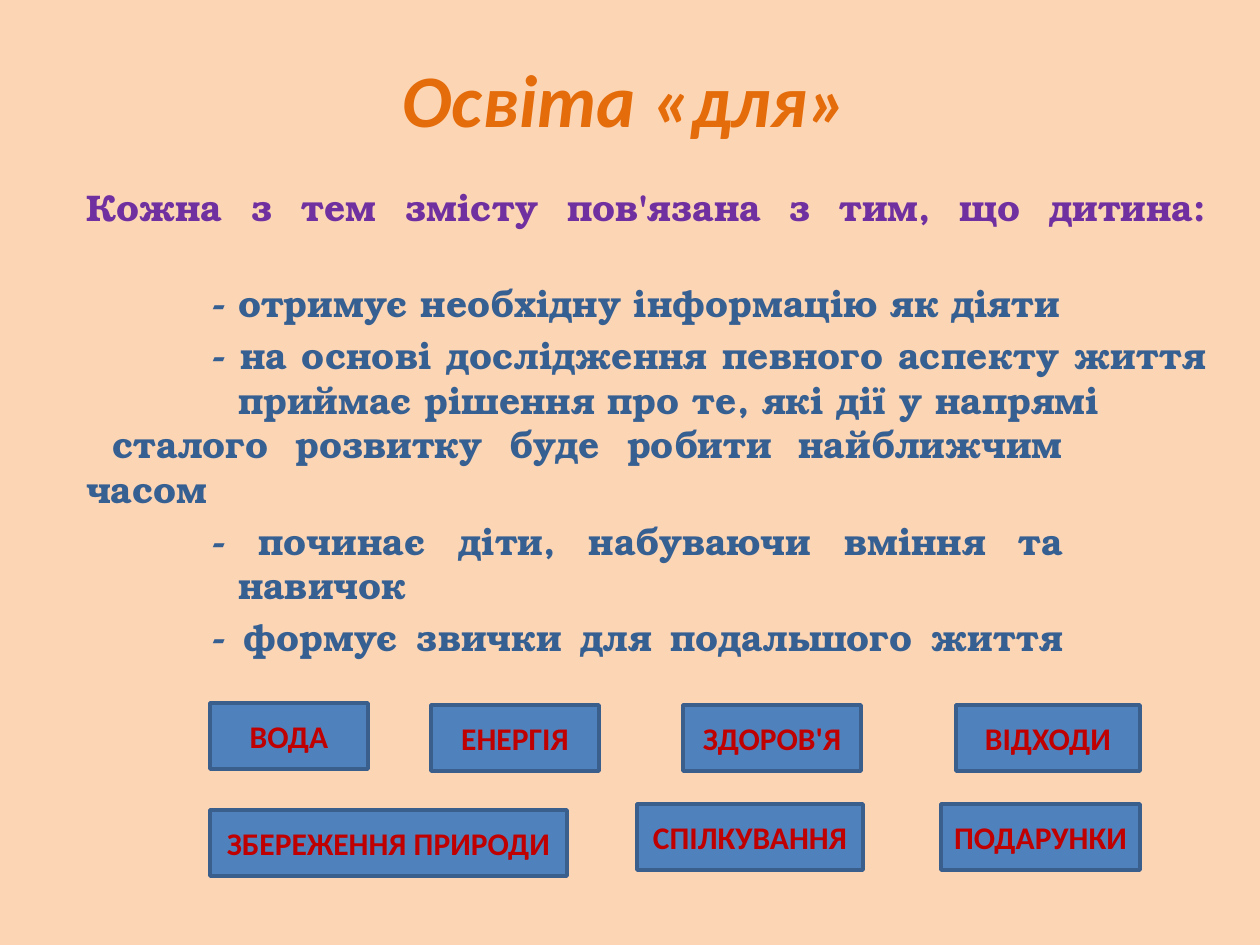
from pptx import Presentation
from pptx.dml.color import RGBColor
from pptx.enum.shapes import MSO_SHAPE
from pptx.enum.text import MSO_ANCHOR, PP_ALIGN
from pptx.util import Pt

RECTANGLE = MSO_SHAPE.RECTANGLE
MIDDLE = MSO_ANCHOR.MIDDLE
CENTER = PP_ALIGN.CENTER
JUSTIFY = PP_ALIGN.JUSTIFY

PX = 6858
COLORS = {
    "background": "FCD5B5",
    "title": "E46C0A",
    "intro": "7030A0",
    "points": "376092",
    "topic": "C00000",
    "topic_fill": "4F81BD",
    "topic_line": "3A5F8C",
}


def color(name):
    return RGBColor.from_string(COLORS[name])


def style(paragraph, font_name, size, color_name, alignment):
    paragraph.alignment = alignment
    paragraph.font.name = font_name
    paragraph.font.size = Pt(size)
    paragraph.font.bold = True
    paragraph.font.color.rgb = color(color_name)


prs = Presentation()
prs.slide_width = 1260 * PX
prs.slide_height = 945 * PX
slide = prs.slides.add_slide(prs.slide_layouts[6])
slide.background.fill.solid()
slide.background.fill.fore_color.rgb = color("background")

# Title
title = slide.shapes.add_textbox(53 * PX, 38 * PX, 1144 * PX, 120 * PX).text_frame
title.word_wrap = True
title.vertical_anchor = MIDDLE
heading = title.paragraphs[0]
heading.text = "Освіта «для»"
style(heading, "Calibri", 40, "title", CENTER)
heading.font.italic = True

# Body: a line break stretches the justified line before it
flush = {"marL": 0, "indent": 0}
hanging = {"marL": 152, "indent": -26}
narrow = {"marL": 0, "marR": 143, "indent": 26}
statements = [
    ("Кожна з тем змісту пов'язана з тим, що дитина:\v", "intro", flush, 4),
    ("- отримує необхідну інформацію як діяти", "points", hanging, 4),
    ("- на основі дослідження певного аспекту життя приймає рішення "
     "про те, які дії у напрямі", "points", hanging, 4),
    ("сталого розвитку буде робити найближчим\vчасом", "points", narrow, 0),
    ("- починає діти, набуваючи вміння та навичок", "points", hanging, 4),
    ("- формує звички для подальшого життя\v", "points", hanging, 4),
]
body = slide.shapes.add_textbox(74 * PX, 178 * PX, 1144 * PX, 735 * PX).text_frame
body.word_wrap = True
body.margin_left = body.margin_right = 12 * PX
for index, (text, color_name, indents, gap) in enumerate(statements):
    statement = body.add_paragraph() if index else body.paragraphs[0]
    statement.text = text
    style(statement, "TeX Gyre Bonum", 20, color_name, JUSTIFY)
    statement.space_before = Pt(gap)
    for side, length in indents.items():
        statement._p.get_or_add_pPr().set(side, str(length * PX))

# Topics: left, top, width, label
topics = [
    (210, 703, 158, "ВОДА"),
    (431, 705, 168, "ЕНЕРГІЯ"),
    (683, 705, 178, "ЗДОРОВ'Я"),
    (956, 705, 184, "ВІДХОДИ"),
    (210, 810, 357, "ЗБЕРЕЖЕННЯ ПРИРОДИ"),
    (637, 804, 226, "СПІЛКУВАННЯ"),
    (941, 804, 199, "ПОДАРУНКИ"),
]
for left, top, width, label in topics:
    topic = slide.shapes.add_shape(RECTANGLE, left * PX, top * PX, width * PX, 66 * PX)
    topic.shadow.inherit = False
    topic.fill.solid()
    topic.fill.fore_color.rgb = color("topic_fill")
    topic.line.color.rgb = color("topic_line")
    topic.line.width = Pt(2)
    topic.text_frame.word_wrap = False
    topic.text_frame.vertical_anchor = MIDDLE
    caption = topic.text_frame.paragraphs[0]
    caption.text = label
    style(caption, "Calibri", 17, "topic", CENTER)

prs.save("out.pptx")
